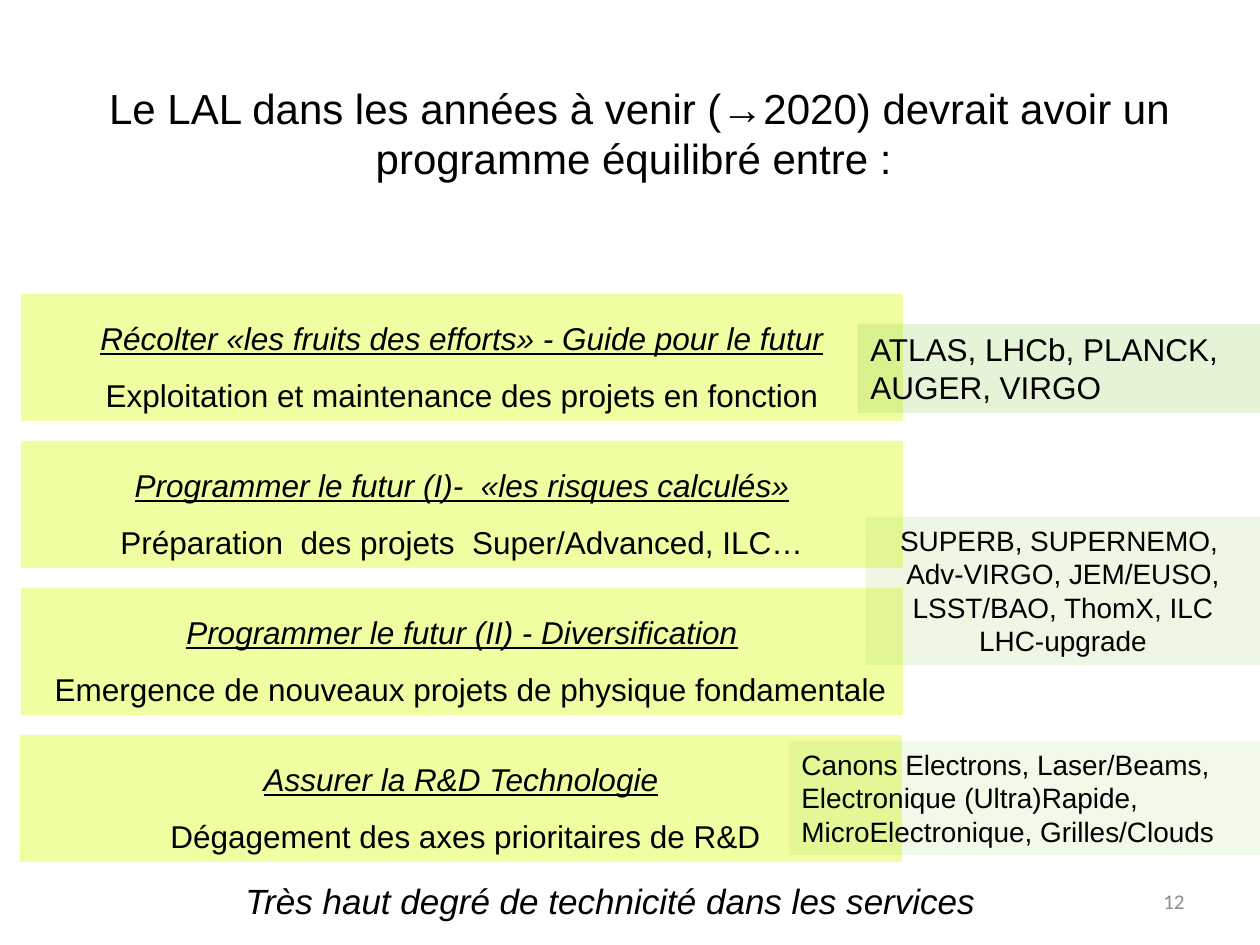
"""Build the slide on the balanced programme of the coming years."""
from lxml.etree import SubElement
from pptx import Presentation
from pptx.dml.color import RGBColor
from pptx.enum.shapes import MSO_SHAPE
from pptx.enum.text import MSO_ANCHOR, PP_ALIGN
from pptx.oxml.ns import qn
from pptx.util import Emu, Pt

SCALE = 914400 / 126
COLORS = {"text": "000000", "band": "F0FDA1", "note": "92D050", "number": "8C8C8C"}
LEFT, CENTER, RIGHT = PP_ALIGN.LEFT, PP_ALIGN.CENTER, PP_ALIGN.RIGHT
BANDS = [
    (21, "Récolter «les fruits des efforts» - Guide pour le futur",
     "Exploitation et maintenance des projets en fonction", 0),
    (21, "Programmer le futur (I)-  «les risques calculés»",
     "Préparation  des projets  Super/Advanced, ILC…", 0),
    (21, "Programmer le futur (II) - Diversification",
     "Emergence de nouveaux projets de physique fondamentale", 17),
    (20, "Assurer la R&D Technologie",
     "Dégagement des axes prioritaires de R&D", 9),
]
NOTES = [
    ((866, 517, 394, 148), 15, 16, CENTER,
     ["SUPERB, SUPERNEMO, ", "Adv-VIRGO, JEM/EUSO, LSST/BAO, ThomX, ILC", "LHC-upgrade"]),
    ((789, 741, 471, 114), 12, 16, LEFT,
     ["Canons Electrons, Laser/Beams, Electronique (Ultra)Rapide, "
      "MicroElectronique, Grilles/Clouds"]),
    ((858, 324, 402, 89), 23, 18, LEFT, ["ATLAS, LHCb, PLANCK,", "AUGER, VIRGO"]),
]


def px(value):
    return Emu(round(value * SCALE))


def write(shape, lines, size, align=LEFT, color="text", face="Arial", anchor=MSO_ANCHOR.TOP):
    frame = shape.text_frame
    frame.word_wrap = True
    frame.vertical_anchor = anchor
    frame.text = "\n".join(lines)
    for para in frame.paragraphs:
        para.alignment = align
        for run in para.runs:
            run.font.size = Pt(size)
            run.font.name = face
            run.font.color.rgb = RGBColor.from_string(COLORS[color])
    return frame.paragraphs


def add_text(slide, box, line, size, **style):
    shape = slide.shapes.add_textbox(*map(px, box))
    return write(shape, [line], size, **style)


def add_box(slide, box, color, alpha=100):
    shape = slide.shapes.add_shape(MSO_SHAPE.RECTANGLE, *map(px, box))
    shape.shadow.inherit = False
    shape.line.fill.background()
    shape.fill.solid()
    shape.fill.fore_color.rgb = RGBColor.from_string(COLORS[color])
    if alpha < 100:
        tone = shape.fill._xPr.find(qn("a:solidFill"))[0]
        SubElement(tone, qn("a:alpha")).set("val", str(alpha * 1000))
    return shape


def add_band(slide, row, left, title, detail, indent):
    shape = add_box(slide, (left, 294 + 147 * row, 882, 127), "band")
    head, body = write(shape, [title, detail], 18, CENTER)
    head.line_spacing = body.line_spacing = 1.5
    head.runs[0].font.italic = head.runs[0].font.underline = True
    if indent:
        body._p.get_or_add_pPr().set("marL", str(px(indent)))


def add_note(slide, box, alpha, size, align, lines):
    write(add_box(slide, box, "note", alpha), lines, size, align)


def main():
    deck = Presentation()
    deck.slide_width, deck.slide_height = px(1260), px(945)
    slide = deck.slides.add_slide(deck.slide_layouts[6])
    add_text(slide, (903, 876, 294, 50), "12", 12, align=RIGHT, color="number",
             face="Calibri", anchor=MSO_ANCHOR.MIDDLE)
    for row, band in enumerate(BANDS):
        add_band(slide, row, *band)
    for note in NOTES:
        add_note(slide, note[0], *note[1:])
    add_text(slide, (54, 76, 1171, 115),
             "Le LAL dans les années à venir (→2020) devrait avoir un programme équilibré entre : ",
             24, align=CENTER)
    closing = add_text(slide, (233, 873, 794, 55),
                       "Très haut degré de technicité dans les services", 20)
    closing[0].runs[0].font.italic = True
    deck.save("out.pptx")


if __name__ == "__main__":
    main()
